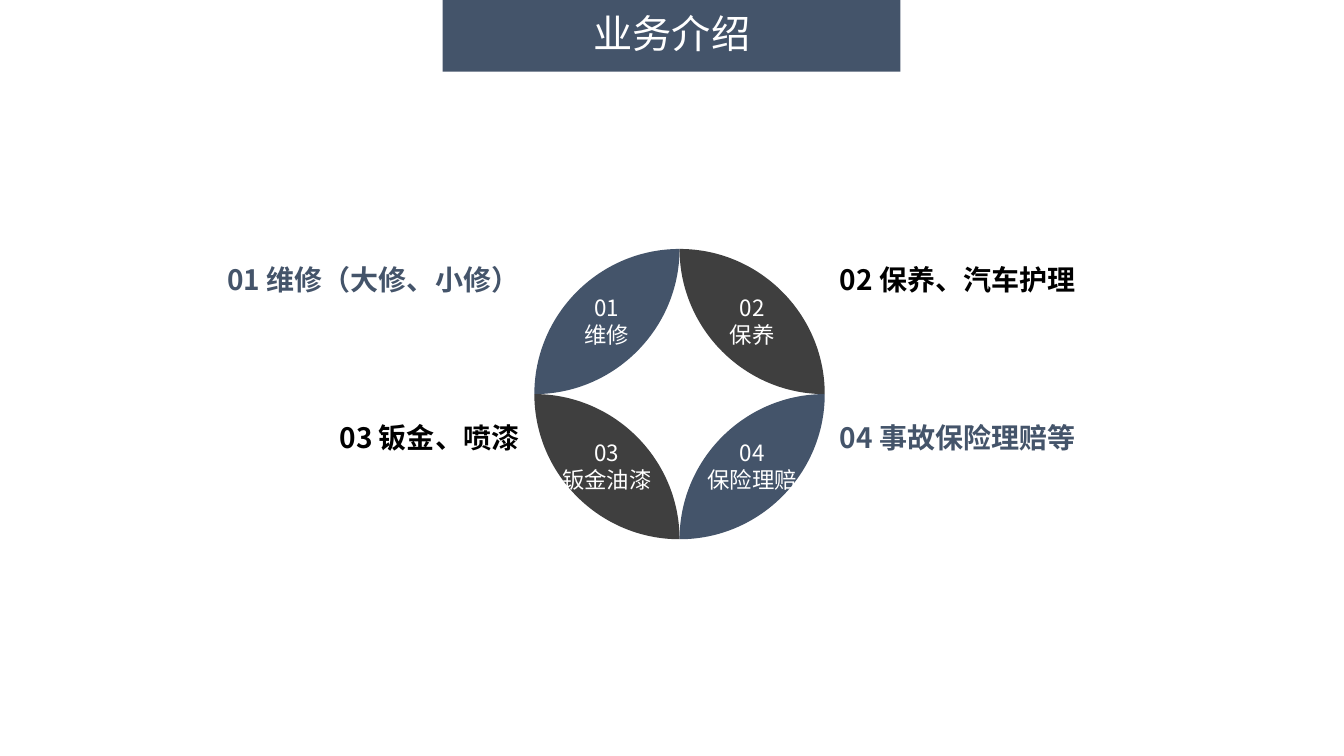
"""Build the business overview slide: a wheel of four petals with a label beside each."""
from dataclasses import dataclass

from lxml.etree import SubElement
from pptx import Presentation
from pptx.dml.color import RGBColor as Color
from pptx.enum.shapes import MSO_SHAPE as Preset
from pptx.enum.text import MSO_ANCHOR as Anchor, PP_ALIGN as Align
from pptx.oxml.ns import qn
from pptx.util import Inches, Pt

TITLE = "业务介绍"
SERVICES = [
    ("01", "维修", "01 维修（大修、小修）"),
    ("02", "保养", "02 保养、汽车护理"),
    ("03", "钣金油漆", "03 钣金、喷漆"),
    ("04", "保险理赔", "04 事故保险理赔等"),
]


@dataclass(frozen=True)
class Theme:
    font: str = "Noto Sans CJK SC"
    blue: str = "44546A"
    gray: str = "3F3F3F"
    white: str = "FFFFFF"
    black: str = "000000"
    title: int = 28
    label: int = 20
    petal: int = 16


THEME = Theme()
WIDTH, HEIGHT = 13.33, 7.5
BANNER = (4.39, 0, 4.54, 0.71)
TITLE_BOX = (4.95, 0.09, 3.43, 0.53)
CENTER_X, CENTER_Y, RADIUS = 6.74, 3.91, 1.44
PETAL_TEXT = (1.15, 0.64)
LABEL = (4.41, 0.5)
LABEL_GAP, LABEL_PITCH = 1.59, 1.57
BEND = 0.55
PETAL = [(0, 1), (BEND, 1), (1, BEND), (1, 0), (1 - BEND, 0), (0, 1 - BEND), (0, 1)]


def paint(shape, color):
    shape.shadow.inherit = False
    shape.fill.solid()
    shape.fill.fore_color.rgb = Color.from_string(color)
    shape.line.fill.background()


def add_text(page, area, lines, size, color, bold=False, frame_format=None, **para_format):
    box = page.shapes.add_textbox(*map(Inches, area))
    frame = box.text_frame
    for name, value in {"word_wrap": True, **(frame_format or {})}.items():
        setattr(frame, name, value)
    for index, line in enumerate(lines):
        para = frame.add_paragraph() if index else frame.paragraphs[0]
        for name, value in para_format.items():
            setattr(para, name, value)
        span = para.add_run()
        span.text = line
        span.font.color.rgb = Color.from_string(color)
        for name, value in {"name": THEME.font, "size": Pt(size), "bold": bold}.items():
            setattr(span.font, name, value)
        SubElement(span._r.get_or_add_rPr(), qn("a:ea"), typeface=THEME.font)


def bend_segments(shape):
    """Turn each three straight segments into one curve."""
    segments = list(shape._element.iter(qn("a:lnTo")))
    for first, second, third in zip(segments[::3], segments[1::3], segments[2::3]):
        first.tag = qn("a:cubicBezTo")
        for segment in (second, third):
            first.append(segment[0])
            segment.getparent().remove(segment)


def add_petal(page, side_x, side_y, color):
    points = [
        (Inches(CENTER_X + side_x * RADIUS * x), Inches(CENTER_Y + side_y * RADIUS * y))
        for x, y in PETAL
    ]
    builder = page.shapes.build_freeform(*points[0])
    builder.add_line_segments(points[1:], close=True)
    petal = builder.convert_to_shape()
    bend_segments(petal)
    paint(petal, color)


def add_service(page, index, number, short, detail):
    row, column = divmod(index, 2)
    side_x, side_y = 2 * column - 1, 2 * row - 1
    on_diagonal = row == column
    add_petal(page, side_x, side_y, THEME.blue if on_diagonal else THEME.gray)

    width, height = PETAL_TEXT
    left = CENTER_X + side_x * RADIUS / 2 - width / 2
    top = CENTER_Y + side_y * RADIUS / 2 - height / 2
    add_text(page, (left, top, width, height), [number, short],
             THEME.petal, THEME.white, alignment=Align.CENTER)

    width, height = LABEL
    left = CENTER_X + side_x * LABEL_GAP - (0 if column else width)
    top = CENTER_Y - RADIUS + row * LABEL_PITCH
    add_text(page, (left, top, width, height), [detail],
             THEME.label, THEME.blue if on_diagonal else THEME.black, bold=True,
             frame_format={"margin_left": 0, "margin_right": 0},
             alignment=Align.LEFT if column else Align.RIGHT, line_spacing=1.25)


def main():
    deck = Presentation()
    deck.slide_width, deck.slide_height = Inches(WIDTH), Inches(HEIGHT)
    page = deck.slides.add_slide(deck.slide_layouts[6])
    paint(page.shapes.add_shape(Preset.RECTANGLE, *map(Inches, BANNER)), THEME.blue)
    add_text(page, TITLE_BOX, [TITLE], THEME.title, THEME.white,
             frame_format={"vertical_anchor": Anchor.MIDDLE},
             alignment=Align.CENTER, line_spacing=0.9)
    for index, service in enumerate(SERVICES):
        add_service(page, index, *service)
    deck.save("out.pptx")


if __name__ == "__main__":
    main()
